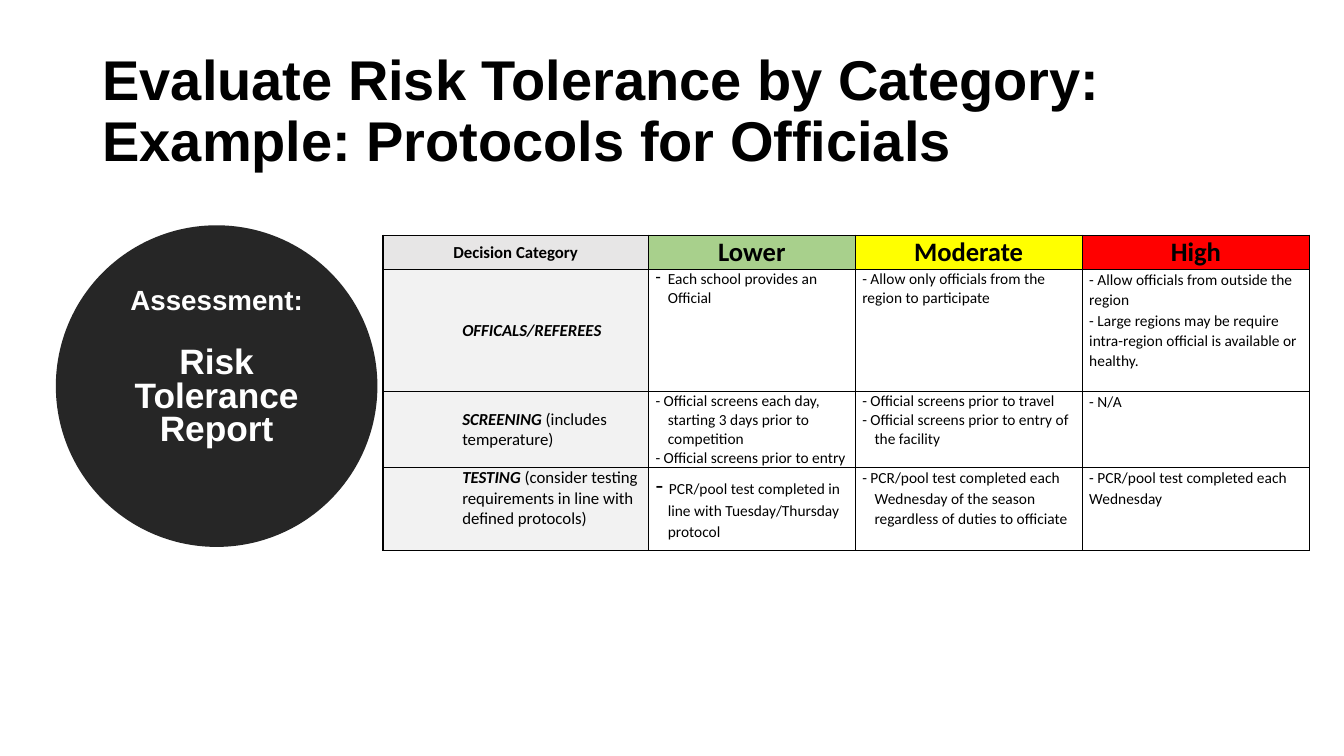
from dataclasses import dataclass
from typing import Optional

from lxml import etree
from pptx import Presentation
from pptx.dml.color import RGBColor
from pptx.enum import shapes, text
from pptx.oxml import ns
from pptx.util import Cm, Pt

BLACK = RGBColor(0x00, 0x00, 0x00)
WHITE = RGBColor(0xFF, 0xFF, 0xFF)
CHARCOAL = RGBColor(0x26, 0x26, 0x26)
HEADER_GREY = RGBColor(0xE7, 0xE6, 0xE6)
CATEGORY_GREY = RGBColor(0xF2, 0xF2, 0xF2)
GREEN = RGBColor(0xA8, 0xD0, 0x8C)
YELLOW = RGBColor(0xFF, 0xFF, 0x00)
RED = RGBColor(0xFF, 0x00, 0x00)

COLUMN_WIDTHS = (6.69, 5.21, 5.72, 5.74)
ROW_HEIGHTS = (0.86, 3.07, 1.93, 2.08)
HANGING = 0.31


@dataclass(frozen=True)
class Header:
    label: str
    fill: RGBColor
    size: float = 19


@dataclass(frozen=True)
class Protocol:
    lines: tuple[str, ...]
    indent: float = 0
    spacing: Optional[float] = None
    bullet: bool = False
    lead: str = ""


@dataclass(frozen=True)
class Category:
    name: str
    note: str
    protocols: tuple[Protocol, ...]
    anchor: text.MSO_ANCHOR = text.MSO_ANCHOR.MIDDLE


HEADERS = (
    Header("Decision Category", HEADER_GREY, 12),
    Header("Lower", GREEN),
    Header("Moderate", YELLOW),
    Header("High", RED),
)

CATEGORIES = (
    Category("OFFICALS/REFEREES", "", (
        Protocol(("Each school provides an Official",), HANGING, bullet=True),
        Protocol(("- Allow only officials from the region to participate",)),
        Protocol(("- Allow officials from outside the region",
                  "- Large regions may be require intra-region official "
                  "is available or healthy."), spacing=1.07),
    )),
    Category("SCREENING", " (includes temperature)", (
        Protocol(("- Official screens each day, starting 3 days prior to competition",
                  "- Official screens prior to entry"), HANGING),
        Protocol(("- Official screens prior to travel",
                  "- Official screens prior to entry of the facility"), HANGING),
        Protocol(("- N/A",), spacing=1.07),
    )),
    Category("TESTING", " (consider testing requirements in line with defined protocols)", (
        Protocol(("PCR/pool test completed in line with Tuesday/Thursday protocol",),
                 HANGING, 1.07, lead="- "),
        Protocol(("- PCR/pool test completed each Wednesday of the season "
                  "regardless of duties to officiate",), HANGING, 1.07),
        Protocol(("- PCR/pool test completed each Wednesday",), spacing=1.07),
    ), text.MSO_ANCHOR.TOP),
)


def add_text(paragraph, content: str, *, size: float, font: str = "Calibri",
             color: RGBColor = BLACK, bold: bool = False, italic: bool = False) -> None:
    for number, line in enumerate(content.split("\n")):
        if number:
            paragraph.add_line_break()
        run = paragraph.add_run()
        run.text = line
        run.font.size = Pt(size)
        run.font.name = font
        run.font.color.rgb = color
        run.font.bold = bold
        run.font.italic = italic


def set_borders(cell, row: int, column: int) -> None:
    """Heavier lines surround the header row, category column and outer sides."""
    heavy = {
        "L": column <= 1 or row == 0,
        "R": column in (0, len(HEADERS) - 1) or row == 0,
        "T": row <= 1 or column == 0,
        "B": row == 0 or column == 0,
    }
    properties = cell._tc.get_or_add_tcPr()
    for side, is_heavy in heavy.items():
        line = etree.SubElement(properties, ns.qn(f"a:ln{side}"),
                                w=str(Pt(1 if is_heavy else 0.75)))
        fill = etree.SubElement(line, ns.qn("a:solidFill"))
        etree.SubElement(fill, ns.qn("a:srgbClr"), val=str(BLACK))


def format_cell(cell, fill: RGBColor, anchor: text.MSO_ANCHOR,
                left: float, right: float) -> None:
    cell.fill.solid()
    cell.fill.fore_color.rgb = fill
    cell.vertical_anchor = anchor
    cell.margin_left, cell.margin_right = Cm(left), Cm(right)
    cell.margin_top = cell.margin_bottom = Cm(0)


def fill_protocol(cell, protocol: Protocol) -> None:
    frame = cell.text_frame
    for number, line in enumerate(protocol.lines):
        paragraph = frame.add_paragraph() if number else frame.paragraphs[0]
        properties = paragraph._p.get_or_add_pPr()
        if protocol.indent:
            properties.set("marL", str(Cm(protocol.indent)))
            properties.set("indent", str(-Cm(protocol.indent)))
        if protocol.bullet:
            etree.SubElement(properties, ns.qn("a:buChar"), char="-")
        if protocol.spacing:
            paragraph.line_spacing = protocol.spacing
        if protocol.lead:
            add_text(paragraph, protocol.lead, size=18)
        add_text(paragraph, line, size=11)


def add_title(slide) -> None:
    title = slide.shapes.title
    title.left, title.top = Cm(2.33), Cm(1.01)
    title.width, title.height = Cm(29.21), Cm(3.68)
    frame = title.text_frame
    frame.word_wrap = True
    frame.auto_size = text.MSO_AUTO_SIZE.NONE
    frame.vertical_anchor = text.MSO_ANCHOR.MIDDLE
    paragraph = frame.paragraphs[0]
    paragraph.alignment = text.PP_ALIGN.LEFT
    paragraph.line_spacing = 0.9
    add_text(paragraph, "Evaluate Risk Tolerance by Category:\n"
             "Example: Protocols for Officials", size=40, font="Arial", bold=True)


def add_assessment_circle(slide) -> None:
    circle = slide.shapes.add_shape(shapes.MSO_SHAPE.OVAL,
                                    Cm(1.65), Cm(5.92), Cm(7.62), Cm(7.62))
    circle.shadow.inherit = False
    circle.fill.solid()
    circle.fill.fore_color.rgb = CHARCOAL
    circle.line.color.rgb = CHARCOAL
    circle.line.width = Pt(13.75)
    frame = circle.text_frame
    frame.word_wrap = True
    frame.vertical_anchor = text.MSO_ANCHOR.MIDDLE
    frame.margin_bottom = Cm(0.98)
    heading, report = frame.paragraphs[0], frame.add_paragraph()
    report.space_before = Pt(22)
    for paragraph, content, size in ((heading, "Assessment:", 19.8),
                                     (report, "Risk Tolerance Report", 25.2)):
        paragraph.alignment = text.PP_ALIGN.CENTER
        paragraph.line_spacing = 0.8
        add_text(paragraph, content, size=size, font="Arial", color=WHITE, bold=True)


def add_risk_table(slide) -> None:
    frame = slide.shapes.add_table(len(ROW_HEIGHTS), len(COLUMN_WIDTHS), Cm(9.65), Cm(5.93),
                                   Cm(sum(COLUMN_WIDTHS)), Cm(sum(ROW_HEIGHTS)))
    table = frame.table
    table.first_row = table.horz_banding = False
    for column, width in zip(table.columns, COLUMN_WIDTHS):
        column.width = Cm(width)
    for row, height in zip(table.rows, ROW_HEIGHTS):
        row.height = Cm(height)
    for row in range(len(ROW_HEIGHTS)):
        for column in range(len(COLUMN_WIDTHS)):
            set_borders(table.cell(row, column), row, column)

    for column, header in enumerate(HEADERS):
        cell = table.cell(0, column)
        format_cell(cell, header.fill, text.MSO_ANCHOR.MIDDLE, 0.03, 0.03)
        paragraph = cell.text_frame.paragraphs[0]
        paragraph.alignment = text.PP_ALIGN.CENTER
        add_text(paragraph, header.label, size=header.size, bold=True)

    for row, category in enumerate(CATEGORIES, start=1):
        cell = table.cell(row, 0)
        format_cell(cell, CATEGORY_GREY, category.anchor, 2, 0.03)
        paragraph = cell.text_frame.paragraphs[0]
        add_text(paragraph, category.name, size=12, bold=True, italic=True)
        if category.note:
            add_text(paragraph, category.note, size=12)
        for column, protocol in enumerate(category.protocols, start=1):
            cell = table.cell(row, column)
            format_cell(cell, WHITE, text.MSO_ANCHOR.TOP, 0.18, 0.18)
            fill_protocol(cell, protocol)


def main() -> None:
    presentation = Presentation()
    presentation.slide_width, presentation.slide_height = Cm(33.87), Cm(19.05)
    slide = presentation.slides.add_slide(presentation.slide_layouts[5])
    add_title(slide)
    add_assessment_circle(slide)
    add_risk_table(slide)
    presentation.save("out.pptx")


if __name__ == "__main__":
    main()
